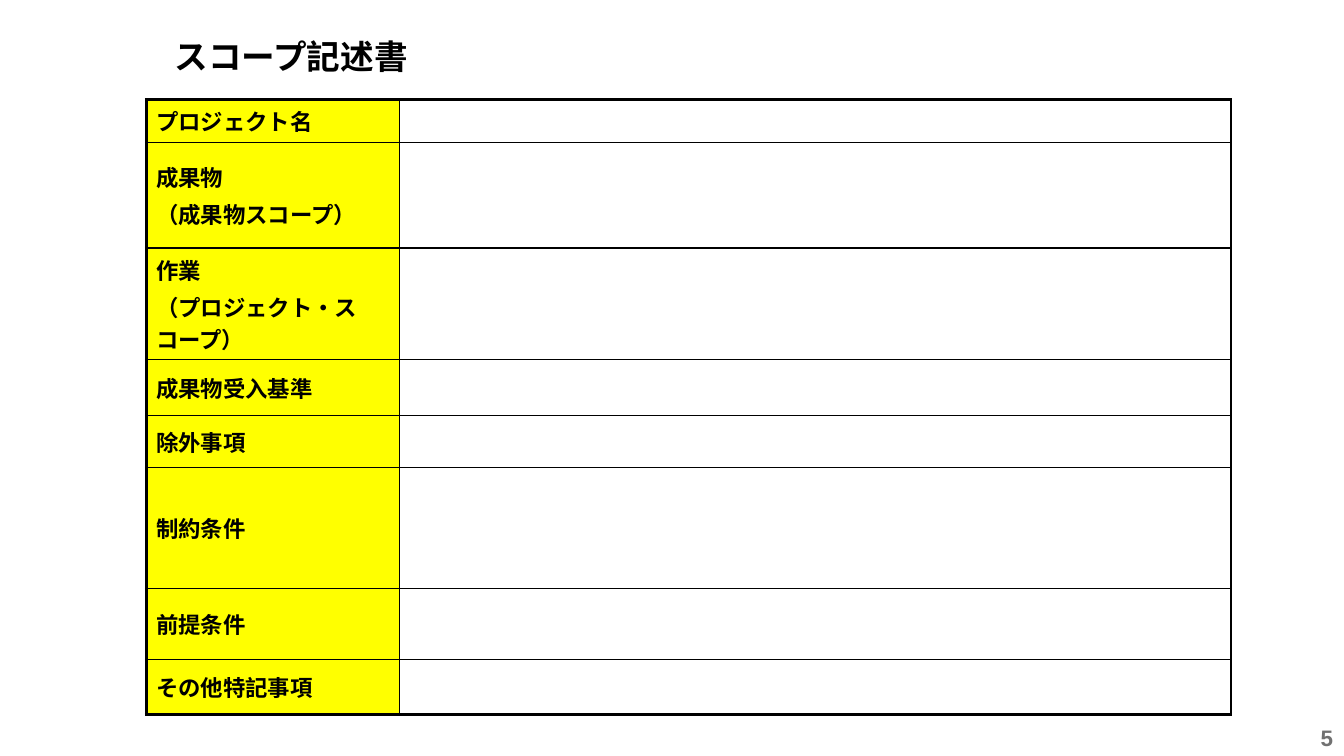
from dataclasses import dataclass

from lxml import etree
from pptx import Presentation
from pptx.dml.color import RGBColor
from pptx.enum.text import MSO_ANCHOR, PP_ALIGN
from pptx.oxml.ns import qn
from pptx.util import Inches, Pt

MIDDLE, BOTTOM = MSO_ANCHOR.MIDDLE, MSO_ANCHOR.BOTTOM
LEFT, RIGHT = PP_ALIGN.LEFT, PP_ALIGN.RIGHT


@dataclass(frozen=True)
class Theme:
    ink: str = "000000"
    label_fill: str = "FFFF00"
    page_number: str = "717171"
    title_font: str = "Noto Sans CJK JP"
    label_font: str = "Times New Roman"
    number_font: str = "Arial"
    title_size: int = 24
    body_size: int = 16
    outer_line: float = 2.25
    inner_line: float = 1


THEME = Theme()


def style(paragraph, font_name, size, color):
    font = paragraph.font
    font.name, font.size, font.bold = font_name, Pt(size), True
    font.color.rgb = RGBColor.from_string(color)


def set_borders(cell, widths):
    """Draw cell borders; widths map lnL, lnR, lnT and lnB, in that order."""
    properties = cell._tc.get_or_add_tcPr()
    for position, (side, width) in enumerate(widths.items()):
        line = etree.Element(qn(f"a:{side}"), w=str(Pt(width)))
        fill = etree.SubElement(line, qn("a:solidFill"))
        etree.SubElement(fill, qn("a:srgbClr"), val=THEME.ink)
        properties.insert(position, line)


prs = Presentation()
prs.slide_width, prs.slide_height = Inches(13.33), Inches(7.5)
slide = prs.slides.add_slide(prs.slide_layouts[5])

# Title
title = slide.shapes.title
title.left, title.top = Inches(1.63), Inches(0.33)
title.width, title.height = Inches(7.8), Inches(0.51)
title.text_frame.text = "スコープ記述書\u3000".replace("\u3000", "　")
title.text_frame.vertical_anchor = MIDDLE
heading = title.text_frame.paragraphs[0]
heading.alignment, heading.line_spacing = LEFT, 0.9
style(heading, THEME.title_font, THEME.title_size, THEME.ink)

# Scope statement: label and row height
items = [
    ("プロジェクト名", 0.38),
    ("成果物\n（成果物スコープ）", 1.05),
    ("作業\n（プロジェクト・スコープ）", 1.11),
    ("成果物受入基準", 0.55),
    ("除外事項", 0.52),
    ("制約条件", 1.2),
    ("前提条件", 0.7),
    ("その他特記事項", 0.55),
]
scope_frame = slide.shapes.add_table(
    len(items), 2, Inches(1.45), Inches(0.99), Inches(10.76), Inches(6.06))
scope = scope_frame.table
scope.first_row = scope.horz_banding = False
scope.columns[0].width, scope.columns[1].width = Inches(2.51), Inches(8.25)

last = len(items) - 1
for row, (label, height) in enumerate(items):
    scope.rows[row].height = Inches(height)
    label_cell, entry_cell = scope.cell(row, 0), scope.cell(row, 1)

    label_cell.text = label
    label_cell.vertical_anchor = MIDDLE
    label_cell.fill.solid()
    label_cell.fill.fore_color.rgb = RGBColor.from_string(THEME.label_fill)
    for paragraph in label_cell.text_frame.paragraphs:
        paragraph.space_before = Pt(3.5)
        style(paragraph, THEME.label_font, THEME.body_size, THEME.ink)

    entry_cell.fill.background()
    style(entry_cell.text_frame.paragraphs[0], THEME.label_font,
          THEME.body_size, THEME.ink)

    outer, inner = THEME.outer_line, THEME.inner_line
    top = outer if row == 0 else inner
    bottom = outer if row == last else inner
    set_borders(label_cell, {"lnL": outer, "lnR": inner, "lnT": top, "lnB": bottom})
    set_borders(entry_cell, {"lnL": inner, "lnR": outer, "lnT": top, "lnB": bottom})

# Page number
page_box = slide.shapes.add_textbox(
    Inches(10.45), Inches(7.05), Inches(2.87), Inches(0.4))
page_frame = page_box.text_frame
page_frame.word_wrap = False
page_frame.vertical_anchor = BOTTOM
page_frame.margin_top = page_frame.margin_bottom = 0
page_frame.text = "5"
page_number = page_frame.paragraphs[0]
page_number.alignment = RIGHT
style(page_number, THEME.number_font, THEME.body_size, THEME.page_number)

prs.save("out.pptx")
